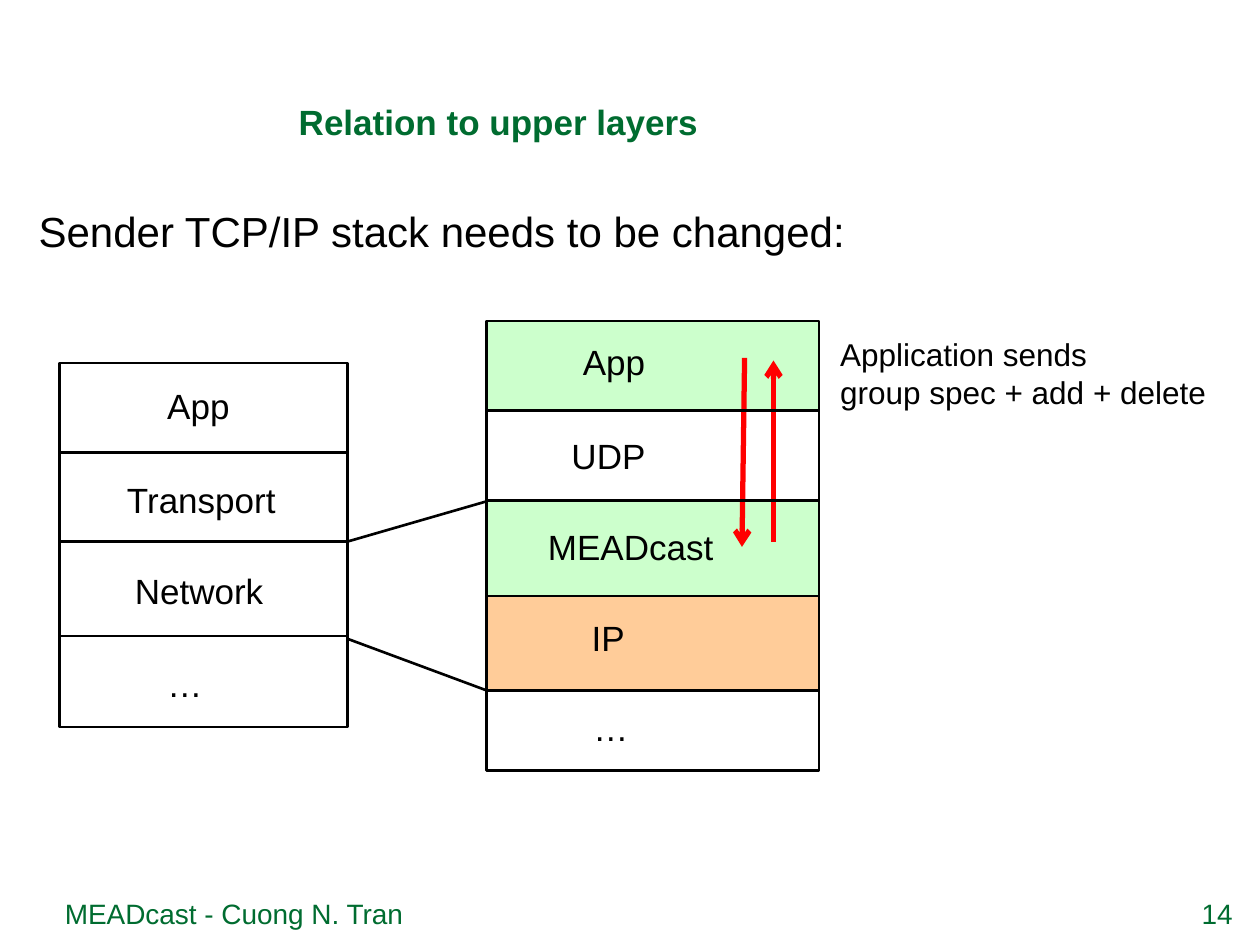
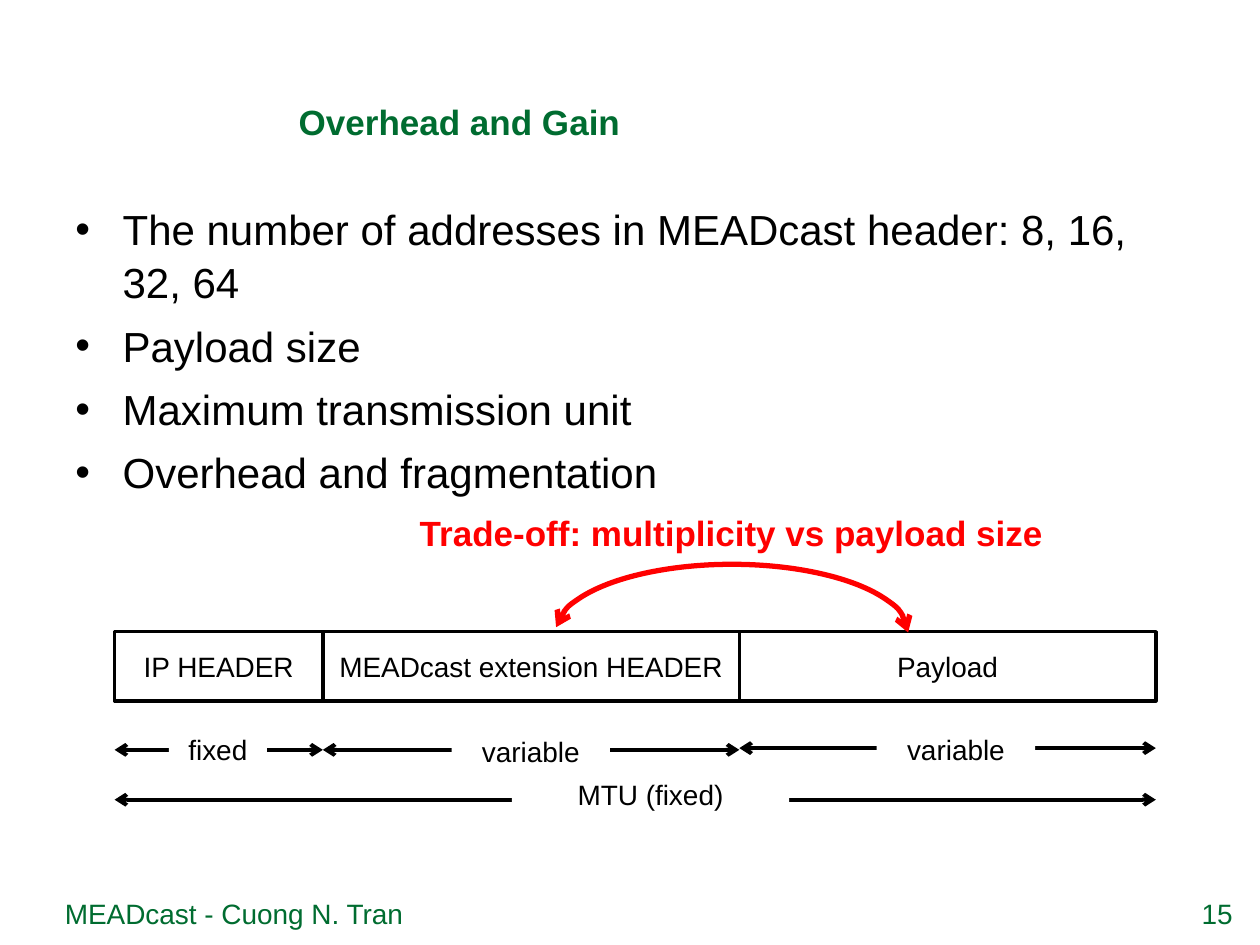
import pptx
import pptx.util
import pptx.dml.color
import pptx.enum.shapes
import pptx.enum.text
import pptx.oxml.ns
from lxml import etree

Pt = pptx.util.Pt
RGBColor = pptx.dml.color.RGBColor
SHAPE = pptx.enum.shapes.MSO_SHAPE
ALIGN = pptx.enum.text.PP_ALIGN
ANCHOR = pptx.enum.text.MSO_ANCHOR
qn = pptx.oxml.ns.qn

FONT = "Arial"
GREEN = RGBColor(0x00, 0x6C, 0x30)
BLACK = RGBColor(0, 0, 0)
WHITE = RGBColor(255, 255, 255)
RED = RGBColor(255, 0, 0)
MINT = RGBColor(0xCC, 0xFF, 0xCC)
PEACH = RGBColor(0xFF, 0xCC, 0x99)

FOOTER = "MEADcast - Cuong N. Tran"

STACK_INTRO = "Sender TCP/IP stack needs to be changed:"
SENDER_NOTE = ["Application sends", "group spec + add + delete"]
OLD_STACK = {
    "left": 34, "width": 164.5,
    "edges": [207.5, 258.5, 309.5, 363.5, 415.5],
    "layers": [("App", 88.5, 216, 50.5, None), ("Transport", 65.5, 270, 100, None),
               ("Network", 70, 322, 88.5, None), ("…", 88.5, 375, 34.5, None)],
}
NEW_STACK = {
    "left": 278, "width": 190,
    "edges": [183.5, 234.5, 286, 340.5, 394.5, 440.5],
    "layers": [("App", 326, 191, 50.5, MINT), ("UDP", 319.5, 245, 57.5, None),
               ("MEADcast", 306, 296.5, 110, MINT), ("IP", 331, 349, 34, PEACH),
               ("…", 332, 400, 34.5, None)],
}
MESSAGES = [((425.5, 204.5), (424, 312.5)), ((442, 309.5), (442, 206))]
EXPANSION = [((198.5, 309.5), (278, 286.5)), ((198.5, 365), (278, 394.5))]

FACTORS = [
    "The number of addresses in MEADcast header: 8, 16, 32, 64",
    "Payload size",
    "Maximum transmission unit",
    "Overhead and fragmentation",
]
PACKET_LEFT, PACKET_TOP, PACKET_HEIGHT, PACKET_UNIT = 65.5, 361, 39.5, 119
FIELDS = [
    ("IP HEADER", 1, "fixed", 96.5, 414, 56, 428.5),
    ("MEADcast extension HEADER", 2, "variable", 258, 415.5, 90.5, 428.5),
    ("Payload", 2, "variable", 501, 414, 90.5, 427.5),
]
TRADE_OFF = "Trade-off: multiplicity vs payload size"


def add_runs(tf, lines, size, color, bold=False, align=ALIGN.LEFT):
    for i, line in enumerate(lines):
        p = tf.paragraphs[0] if i == 0 else tf.add_paragraph()
        p.alignment = align
        r = p.add_run()
        r.text = line
        r.font.name = FONT
        r.font.size = Pt(size)
        r.font.bold = bold
        r.font.color.rgb = color


def add_text(s, lines, box, size, color=BLACK, align=ALIGN.LEFT, wrap=True):
    tf = s.shapes.add_textbox(*map(Pt, box)).text_frame
    tf.word_wrap = wrap
    if not wrap:
        tf.auto_size = pptx.enum.text.MSO_AUTO_SIZE.SHAPE_TO_FIT_TEXT
    add_runs(tf, lines, size, color, align=align)
    return tf


def add_box(s, box, text=None, fill=None, line=None, width=1.5, size=16,
            color=BLACK, bold=False, shape=SHAPE.RECTANGLE):
    sp = s.shapes.add_shape(shape, *map(Pt, box))
    sp.shadow.inherit = False
    if fill is None:
        sp.fill.background()
    else:
        sp.fill.solid()
        sp.fill.fore_color.rgb = fill
    if line is None:
        sp.line.fill.background()
    else:
        sp.line.color.rgb = line
        sp.line.width = Pt(width)
    if text:
        sp.text_frame.word_wrap = True
        sp.text_frame.vertical_anchor = ANCHOR.MIDDLE
        add_runs(sp.text_frame, [text], size, color, bold, ALIGN.CENTER)
    return sp


def add_arrowheads(sp, ends):
    ln = sp.line._get_or_add_ln()
    for end in ends:
        etree.SubElement(ln, qn("a:" + end), type="arrow")


def add_line(s, start, end, color=BLACK, width=1.5, ends=()):
    c = s.shapes.add_connector(pptx.enum.shapes.MSO_CONNECTOR.STRAIGHT,
                               *map(Pt, start + end))
    c.line.color.rgb = color
    c.line.width = Pt(width)
    add_arrowheads(c, ends)
    etree.SubElement(c._element.spPr, qn("a:effectLst"))


def add_slide(prs, title, number):
    s = prs.slides.add_slide(prs.slide_layouts[5])
    sp = s.shapes.title
    sp.left, sp.top, sp.width, sp.height = map(Pt, (163.5, 49, 310.5, 36))
    sp.text_frame.vertical_anchor = ANCHOR.BOTTOM
    add_runs(sp.text_frame, [title], 20, GREEN, bold=True)
    add_text(s, [FOOTER], (30, 508.5, 609, 23), 16, GREEN)
    add_text(s, [str(number)], (649.5, 508.5, 62, 23), 16, GREEN, ALIGN.RIGHT)
    return s


def fill_layers(s, stack):
    edges = stack["edges"]
    for layer, top, bottom in zip(stack["layers"], edges, edges[1:]):
        if layer[-1] is not None:
            add_box(s, (stack["left"], top, stack["width"], bottom - top), fill=layer[-1])


def draw_stack(s, stack):
    left, width, edges = stack["left"], stack["width"], stack["edges"]
    add_box(s, (left, edges[0], width, edges[-1] - edges[0]), line=BLACK)
    for y in edges[1:-1]:
        add_line(s, (left, y), (left + width, y))
    for text, x, y, w, _ in stack["layers"]:
        add_text(s, [text], (x, y, w, 31.5), 20, wrap=False)


def build_layers_slide(prs):
    s = add_slide(prs, "Relation to upper layers", 14)
    add_text(s, [STACK_INTRO], (15, 114, 492.5, 44.5), 24)
    fill_layers(s, NEW_STACK)
    for start, end in MESSAGES:
        add_line(s, start, end, RED, 3, ["tailEnd"])
    for stack in (OLD_STACK, NEW_STACK):
        draw_stack(s, stack)
    for start, end in EXPANSION:
        add_line(s, start, end)
    add_text(s, SENDER_NOTE, (473, 188, 225.5, 51), 18, wrap=False)


def build_overhead_slide(prs):
    s = add_slide(prs, "Overhead and Gain", 15)
    tf = add_text(s, FACTORS, (36, 111.5, 648, 246), 24)
    for p in tf.paragraphs:
        pPr = p._p.get_or_add_pPr()
        pPr.set("marL", str(Pt(27)))
        pPr.set("indent", str(-Pt(27)))
        etree.SubElement(pPr, qn("a:buFont"), typeface=FONT)
        etree.SubElement(pPr, qn("a:buChar"), char="•")
        p.line_spacing = 1.05
        p.space_after = Pt(6)

    both = ["headEnd", "tailEnd"]
    x = PACKET_LEFT
    for name, units, extent, left, top, w, y in FIELDS:
        width = units * PACKET_UNIT
        add_box(s, (x, PACKET_TOP, width, PACKET_HEIGHT), name, line=BLACK, width=2)
        add_line(s, (x, y), (x + width, y), width=2.25, ends=both)
        add_box(s, (left, top, w, 28), extent, fill=WHITE)
        x += width
    add_line(s, (PACKET_LEFT, 457), (x, 457), width=2.25, ends=both)
    add_box(s, (292.5, 440, 158.5, 28), "MTU (fixed)", fill=WHITE)

    arc = add_box(s, (317.5, 322.5, 201.5, 78), line=RED, width=3, shape=SHAPE.ARC)
    arc.adjustments[0] = 109.04
    arc.adjustments[1] = 0
    add_arrowheads(arc, both)
    add_box(s, (224, 290, 388, 28), TRADE_OFF, fill=WHITE, size=20, color=RED, bold=True)


def main():
    prs = pptx.Presentation()
    prs.slide_width, prs.slide_height = Pt(720), Pt(540)
    build_layers_slide(prs)
    build_overhead_slide(prs)
    prs.save("out.pptx")


if __name__ == "__main__":
    main()
